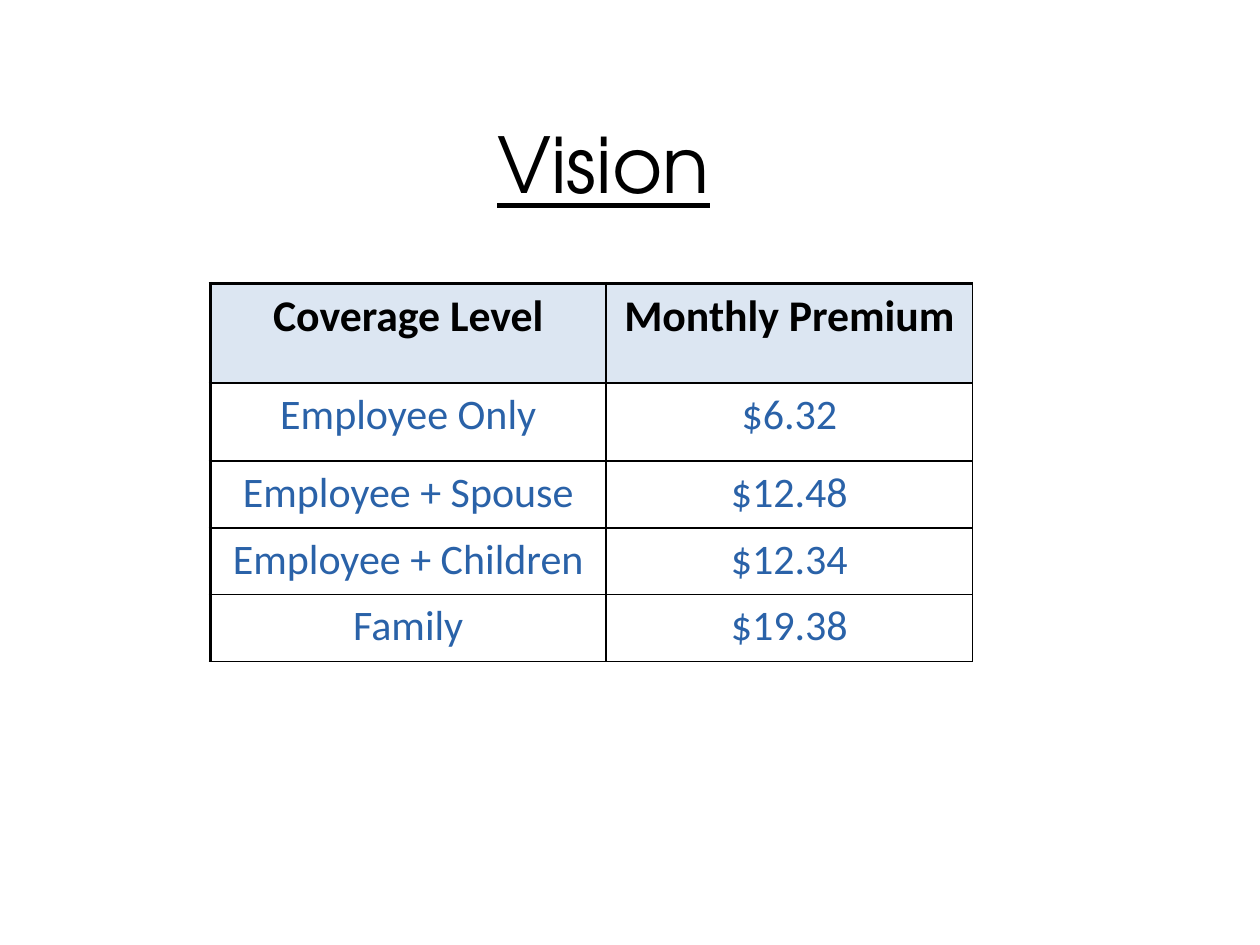
from lxml import etree
from pptx import Presentation
from pptx import util as u
from pptx.dml.color import RGBColor
from pptx.enum import text
from pptx.oxml.ns import qn

BLACK, BLUE, PALE_BLUE, WHITE = "000000", "2A62A8", "DCE6F2", "FFFFFF"

PREMIUMS = [
    ("Coverage Level", "Monthly Premium"),
    ("Employee Only", "$6.32"),
    ("Employee + Spouse", "$12.48"),
    ("Employee + Children", "$12.34"),
    ("Family", "$19.38"),
]
COLUMN_WIDTHS = [3.14, 2.91]
ROW_HEIGHTS = [0.79, 0.62, 0.53, 0.53, 0.53]


def color(hex_value):
    return RGBColor.from_string(hex_value)


def style_paragraph(paragraph, font_name, size, hex_value, bold=False):
    paragraph.alignment = text.PP_ALIGN.CENTER
    font = paragraph.runs[0].font
    font.name, font.size, font.bold = font_name, u.Pt(size), bold
    font.color.rgb = color(hex_value)
    return font


def set_borders(cell, widths):
    """Draw black borders; widths maps each side (L, R, T, B) to points."""
    properties = cell._tc.get_or_add_tcPr()
    for index, (side, width) in enumerate(widths.items()):
        line = etree.Element(qn(f"a:ln{side}"), w=str(u.Pt(width)))
        fill = etree.SubElement(line, qn("a:solidFill"))
        etree.SubElement(fill, qn("a:srgbClr"), val=BLACK)
        properties.insert(index, line)  # borders come before the fill


def add_title(slide, left, top, width, height):
    box = slide.shapes.add_textbox(*map(u.Inches, (left, top, width, height)))
    frame = box.text_frame
    frame.word_wrap = True
    frame.vertical_anchor = text.MSO_ANCHOR.MIDDLE
    frame.text = "Vision"
    font = style_paragraph(frame.paragraphs[0], "TeX Gyre Adventor", 44, BLACK)
    font.underline = True


def add_premium_table(slide, left, top):
    size = sum(COLUMN_WIDTHS), sum(ROW_HEIGHTS)
    frame = slide.shapes.add_table(len(PREMIUMS), len(COLUMN_WIDTHS),
                                   *map(u.Inches, (left, top, *size)))
    table = frame.table
    table.horz_banding = False
    for column, width in zip(table.columns, COLUMN_WIDTHS):
        column.width = u.Inches(width)
    for row, height in zip(table.rows, ROW_HEIGHTS):
        row.height = u.Inches(height)

    for row_index, labels in enumerate(PREMIUMS):
        header = row_index == 0
        for column_index, label in enumerate(labels):
            cell = table.cell(row_index, column_index)
            cell.text = label
            style_paragraph(cell.text_frame.paragraphs[0], "Calibri",
                            25 if header else 24,
                            BLACK if header else BLUE, bold=header)
            cell.fill.solid()
            cell.fill.fore_color.rgb = color(PALE_BLUE if header else WHITE)
            # Heavier rule along the left and top edges of the table
            set_borders(cell, {"L": 2.25 if column_index == 0 else 1, "R": 1,
                               "T": 2.25 if header else 1, "B": 1})


def main():
    presentation = Presentation()
    presentation.slide_width = u.Inches(10)
    presentation.slide_height = u.Inches(7.5)
    slide = presentation.slides.add_slide(presentation.slide_layouts[6])
    add_title(slide, 0.33, 0.83, 8.92, 0.92)
    add_premium_table(slide, 1.67, 2.25)
    presentation.save("out.pptx")


if __name__ == "__main__":
    main()
